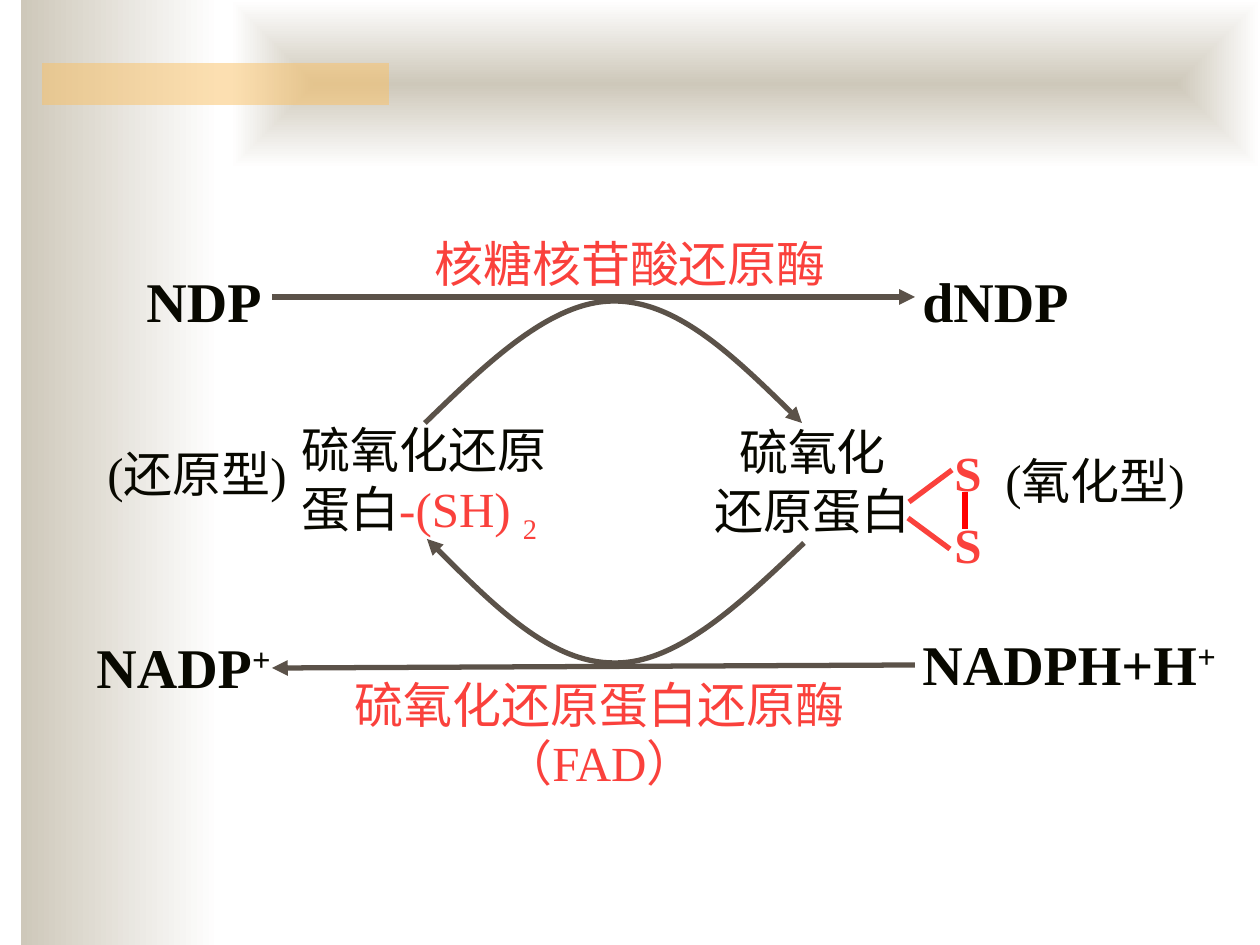
from lxml import etree
from pptx import Presentation
from pptx.dml.color import RGBColor
from pptx.enum.shapes import MSO_CONNECTOR, MSO_SHAPE
from pptx.enum.text import PP_ALIGN
from pptx.oxml.ns import qn
from pptx.util import Inches, Pt

RECTANGLE = MSO_SHAPE.RECTANGLE
STRAIGHT = MSO_CONNECTOR.STRAIGHT
LEFT, CENTER = PP_ALIGN.LEFT, PP_ALIGN.CENTER

SAND = RGBColor(0xCE, 0xC8, 0xBA)
WHITE = RGBColor(0xFF, 0xFF, 0xFF)
AMBER = RGBColor(0xFA, 0xC1, 0x64)
BLACK = RGBColor(0x08, 0x08, 0x00)
CORAL = RGBColor(0xFA, 0x41, 0x3C)
RED = RGBColor(0xFF, 0x00, 0x00)
BROWN = RGBColor(0x5B, 0x52, 0x49)

LATIN_FONT = "Times New Roman"
CHINESE_FONT = "Noto Sans CJK SC"
PX = Inches(10) / 1260


def emu(*lengths):
    return [round(length * PX) for length in lengths]


def style_line(shape, color, arrow):
    """Colour a 3 pt line and put an arrowhead at its end if asked."""
    shape.line.color.rgb = color
    shape.line.width = Pt(3)
    if arrow:
        outline = shape.line._get_or_add_ln()
        etree.SubElement(outline, qn("a:tailEnd"), type="triangle")


presentation = Presentation()
presentation.slide_width, presentation.slide_height = emu(1260, 945)
slide = presentation.slides.add_slide(presentation.slide_layouts[6])
shapes = slide.shapes

# Background bands
side_band = shapes.add_shape(RECTANGLE, *emu(21, 0, 199, 945))
top_band = shapes.add_shape(RECTANGLE, *emu(231, 0, 1029, 168))
accent_bar = shapes.add_shape(RECTANGLE, *emu(42, 63, 347, 42))
for band in (side_band, top_band, accent_bar):
    band.shadow.inherit = False
    band.line.fill.background()
for band in (side_band, top_band):
    band.fill.gradient()
    band.fill.gradient_angle = 0
    for stop, position, color in zip(band.fill.gradient_stops, (0, 1), (SAND, WHITE)):
        stop.position = position
        stop.color.rgb = color

linear = top_band._element.spPr.find(".//" + qn("a:lin"))
radial = etree.Element(qn("a:path"), path="shape")
etree.SubElement(radial, qn("a:fillToRect"), l="50000", t="50000", r="50000", b="50000")
linear.getparent().replace(linear, radial)

accent_bar.fill.solid()
accent_bar.fill.fore_color.rgb = AMBER
accent_color = accent_bar._element.spPr.find(".//" + qn("a:srgbClr"))
etree.SubElement(accent_color, qn("a:alpha"), val="50000")

# Reaction arrows and disulfide bonds: start, end, colour, arrowhead
LINES = [
    (272, 297, 915, 297, BROWN, True),
    (915, 665, 272, 668, BROWN, True),
    (909, 502, 952, 470, CORAL, False),
    (908, 518, 950, 549, CORAL, False),
    (965, 492, 965, 529, RED, False),
]
for *ends, color, arrow in LINES:
    connector = shapes.add_connector(STRAIGHT, *emu(*ends))
    etree.SubElement(connector._element.spPr, qn("a:effectLst"))
    style_line(connector, color, arrow)

# Cycle arcs: start point, then three points for each Bézier segment
ARCS = [
    [(425, 423), (488, 362), (551, 301), (614, 301), (677, 301), (740, 362), (802, 423)],
    [(804, 543), (741, 603), (677, 664), (614, 663), (551, 663), (489, 601), (427, 539)],
]
for points in ARCS:
    start, *rest = points
    builder = shapes.build_freeform(*start, scale=PX)
    builder.add_line_segments(rest, close=False)
    arc = builder.convert_to_shape()
    path = arc._element.spPr.find(".//" + qn("a:path"))
    segments = path.findall(qn("a:lnTo"))
    for first in range(0, len(segments), 3):
        curve = etree.SubElement(path, qn("a:cubicBezTo"))
        for segment in segments[first:first + 3]:
            curve.append(segment[0])
            path.remove(segment)
    arc.shadow.inherit = False
    arc.fill.background()
    style_line(arc, BROWN, True)

# Labels: box, size, bold, alignment, runs of (text, colour, baseline)
LABELS = [
    ((134, 260, 147, 79), 32, True, LEFT, [("NDP", BLACK, 0)]),
    ((910, 260, 189, 79), 32, True, LEFT, [("dNDP", BLACK, 0)]),
    ((910, 623, 357, 79), 32, True, LEFT, [("NADPH+H", BLACK, 0), ("+", BLACK, 30)]),
    ((84, 626, 208, 79), 32, True, LEFT, [("NADP", BLACK, 0), ("+", BLACK, 30)]),
    ((422, 227, 431, 72), 28, False, LEFT, [("核糖核苷酸还原酶", CORAL, 0)]),
    ((289, 413, 315, 130), 28, False, LEFT,
     [("硫氧化还原蛋白", BLACK, 0), ("-(SH) ", CORAL, 0), ("2", CORAL, -25)]),
    ((95, 437, 242, 72), 28, False, LEFT, [("(还原型)", BLACK, 0)]),
    ((697, 415, 231, 130), 28, False, CENTER, [("硫氧化 还原蛋白", BLACK, 0)]),
    ((942, 436, 63, 72), 28, True, LEFT, [("S", CORAL, 0)]),
    ((942, 508, 63, 72), 28, True, LEFT, [("S", CORAL, 0)]),
    ((993, 444, 220, 72), 28, False, LEFT, [("(氧化型)", BLACK, 0)]),
    ((316, 668, 567, 130), 28, False, CENTER, [("硫氧化还原蛋白还原酶（FAD）", CORAL, 0)]),
]
for box, size, bold, alignment, runs in LABELS:
    frame = shapes.add_textbox(*emu(*box)).text_frame
    frame.word_wrap = True
    paragraph = frame.paragraphs[0]
    paragraph.alignment = alignment
    paragraph.font.size = Pt(size)
    paragraph.font.bold = bold
    paragraph.font.name = LATIN_FONT
    for text, color, baseline in runs:
        run = paragraph.add_run()
        run.text = text
        run.font.color.rgb = color
        properties = run._r.get_or_add_rPr()
        etree.SubElement(properties, qn("a:ea"), typeface=CHINESE_FONT)
        if baseline:
            properties.set("baseline", str(baseline * 1000))

presentation.save("out.pptx")
